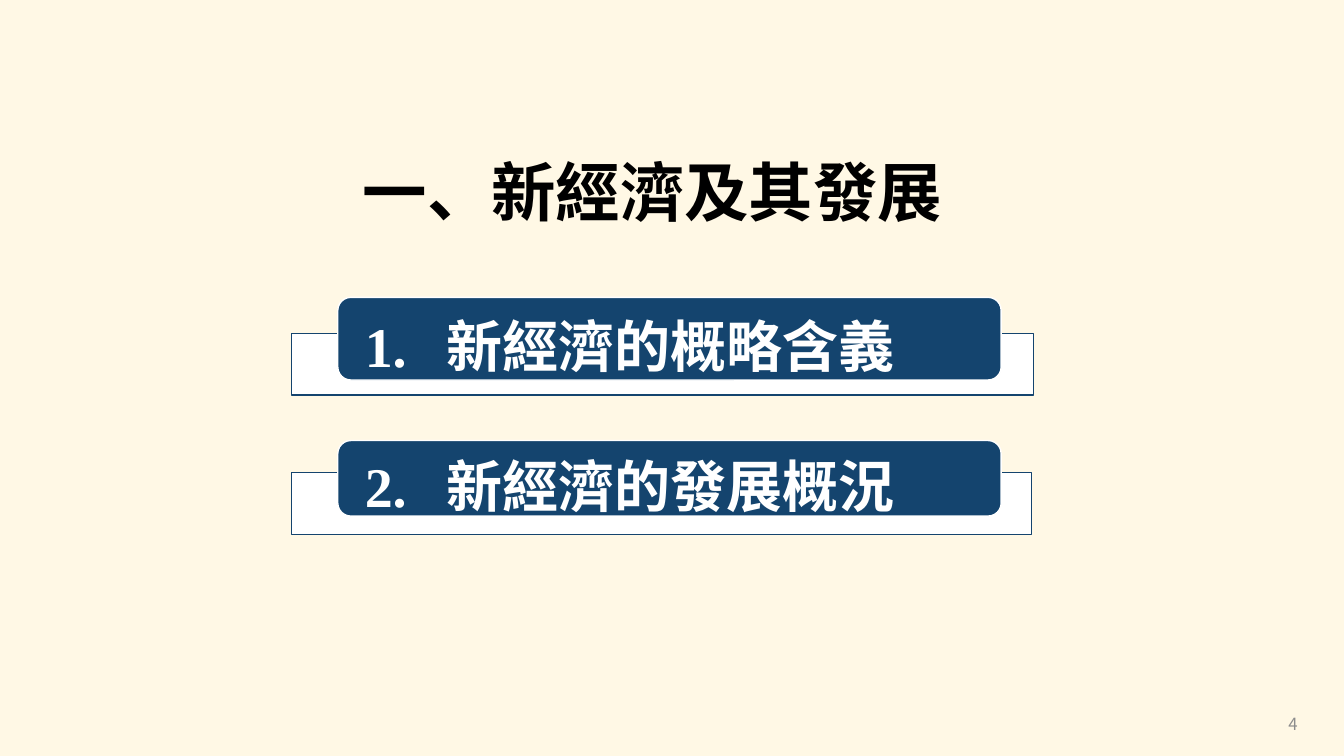
from dataclasses import dataclass

from lxml import etree
from pptx import Presentation
from pptx.dml.color import RGBColor
from pptx.enum.shapes import MSO_SHAPE
from pptx.enum.text import MSO_ANCHOR, PP_ALIGN
from pptx.oxml.ns import qn
from pptx.shapes.autoshape import Shape
from pptx.slide import Slide
from pptx.util import Inches, Pt

RECTANGLE = MSO_SHAPE.RECTANGLE
ROUNDED = MSO_SHAPE.ROUNDED_RECTANGLE
MIDDLE = MSO_ANCHOR.MIDDLE
LEFT, CENTER, RIGHT = PP_ALIGN.LEFT, PP_ALIGN.CENTER, PP_ALIGN.RIGHT

CREAM, NAVY, WHITE, BLACK, GRAY = "FFF8E5", "14446E", "FFFFFF", "000000", "8C8C8C"
CHINESE_FONT = "Noto Sans CJK SC"
CORNER_RADIUS = 0.13
NUMBER_WIDTH = 0.81


@dataclass(frozen=True)
class Box:
    left: float
    top: float
    width: float
    height: float


@dataclass(frozen=True)
class TextStyle:
    font: str
    size: float
    color: str
    bold: bool
    alignment: PP_ALIGN
    line_spacing: float


@dataclass(frozen=True)
class AgendaItem:
    number: str
    title: str
    panel: Box
    label: Box


TITLE_STYLE = TextStyle("Roboto", 46, BLACK, True, CENTER, 0.9)
LABEL_STYLE = TextStyle("Times New Roman", 40, WHITE, True, LEFT, 1.2)
PAGE_STYLE = TextStyle(CHINESE_FONT, 12, GRAY, False, RIGHT, 1.0)

AGENDA = (
    AgendaItem("1.", "新經濟的概略含義",
               Box(2.89, 3.31, 7.36, 0.61), Box(3.35, 2.95, 6.58, 0.82)),
    AgendaItem("2.", "新經濟的發展概況",
               Box(2.89, 4.69, 7.34, 0.61), Box(3.35, 4.37, 6.58, 0.75)),
)


def rgb(value: str) -> RGBColor:
    return RGBColor.from_string(value)


def write_text(shape: Shape, runs: tuple[str, ...], style: TextStyle,
               hanging: float = 0) -> None:
    frame = shape.text_frame
    frame.word_wrap = True
    frame.vertical_anchor = MIDDLE
    paragraph = frame.paragraphs[0]
    paragraph.alignment = style.alignment
    paragraph.line_spacing = style.line_spacing
    if hanging:
        properties = paragraph._p.get_or_add_pPr()
        properties.set("marL", str(Inches(hanging)))
        properties.set("indent", str(-Inches(hanging)))
    for text in runs:
        run = paragraph.add_run()
        run.text = text
        run.font.name = style.font
        run.font.size = Pt(style.size)
        run.font.bold = style.bold
        run.font.color.rgb = rgb(style.color)
        east_asian = etree.SubElement(run._r.get_or_add_rPr(), qn("a:ea"))
        east_asian.set("typeface", CHINESE_FONT)


def add_text(slide: Slide, box: Box, text: str, style: TextStyle) -> None:
    shape = slide.shapes.add_textbox(
        Inches(box.left), Inches(box.top), Inches(box.width), Inches(box.height))
    write_text(shape, (text,), style)


def add_box(slide: Slide, kind: MSO_SHAPE, box: Box, fill: str, line: str) -> Shape:
    shape = slide.shapes.add_shape(
        kind, Inches(box.left), Inches(box.top), Inches(box.width), Inches(box.height))
    shape.shadow.inherit = False
    shape.fill.solid()
    shape.fill.fore_color.rgb = rgb(fill)
    shape.line.color.rgb = rgb(line)
    shape.line.width = Pt(1)
    return shape


def add_agenda_item(slide: Slide, item: AgendaItem) -> None:
    add_box(slide, RECTANGLE, item.panel, WHITE, NAVY)
    label = add_box(slide, ROUNDED, item.label, NAVY, WHITE)
    label.adjustments[0] = CORNER_RADIUS / item.label.height
    frame = label.text_frame
    frame.margin_left = frame.margin_right = Inches(0.23)
    frame.margin_top = frame.margin_bottom = 0
    write_text(label, (item.number + "\t", item.title), LABEL_STYLE, NUMBER_WIDTH)


def main() -> None:
    presentation = Presentation()
    presentation.slide_width = Inches(13.33)
    presentation.slide_height = Inches(7.5)
    slide = presentation.slides.add_slide(presentation.slide_layouts[6])
    background = slide.background.fill
    background.solid()
    background.fore_color.rgb = rgb(CREAM)

    add_text(slide, Box(9.97, 6.98, 3, 0.4), "4", PAGE_STYLE)
    add_text(slide, Box(3.37, 1.59, 6.2, 0.71), "一、新經濟及其發展", TITLE_STYLE)
    for item in AGENDA:
        add_agenda_item(slide, item)
    presentation.save("out.pptx")


if __name__ == "__main__":
    main()
